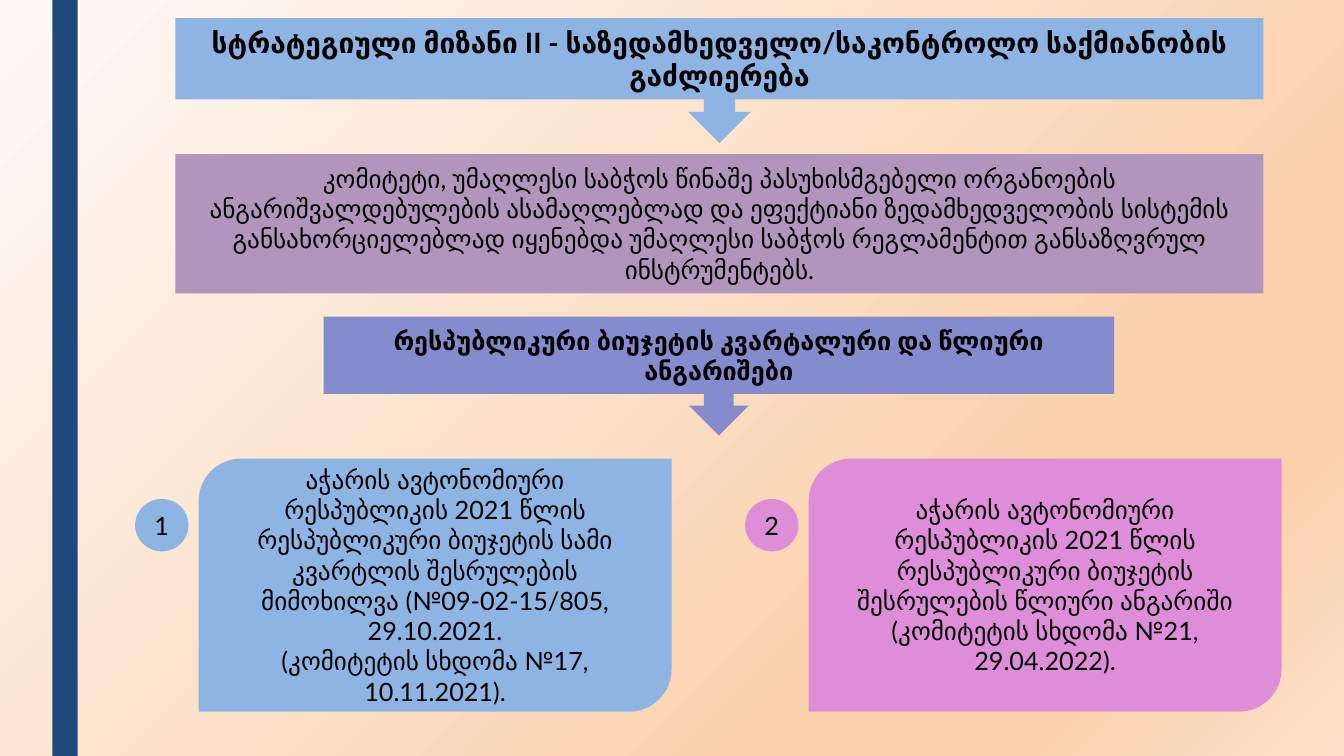
import pptx
import pptx.dml.color
import pptx.enum.shapes
import pptx.enum.text
import pptx.oxml
import pptx.oxml.ns
import pptx.util
from dataclasses import dataclass

Inches = pptx.util.Inches
SHAPE = pptx.enum.shapes.MSO_SHAPE


@dataclass(frozen=True)
class Theme:
    font: str = "Lato"
    title_size: int = 20
    body_size: int = 18
    text: str = "000000"
    navy: str = "1F497D"
    blue: str = "8EB4E3"
    pink: str = "DE8ED8"
    mauve: str = "B295BD"
    indigo: str = "858CCD"
    backdrop: tuple = ((0, "FFFAF6"), (74, "FBD0AC"), (83, "FBD0AC"), (100, "FDE0C7"))


def rgb(value):
    return pptx.dml.color.RGBColor.from_string(value)


def write_text(tf, text, *, font, size, color, bold=False):
    tf.word_wrap = True
    tf.vertical_anchor = pptx.enum.text.MSO_ANCHOR.MIDDLE
    for i, line in enumerate(text.split("\n")):
        p = tf.paragraphs[0] if i == 0 else tf.add_paragraph()
        p.alignment = pptx.enum.text.PP_ALIGN.CENTER
        r = p.add_run()
        r.text = line
        r.font.name = font
        r.font.size = pptx.util.Pt(size)
        r.font.bold = bold
        r.font.color.rgb = rgb(color)


class SlideBuilder:
    def __init__(self, s, theme):
        self.s = s
        self.theme = theme

    def background(self):
        fill = self.s.background.fill
        fill.gradient()
        fill.gradient_angle = 315
        stops = self.s.element.xpath(".//p:bg//a:gsLst")[0]
        for stop in list(stops):
            stops.remove(stop)
        for percent, color in self.theme.backdrop:
            stops.append(pptx.oxml.parse_xml(
                f'<a:gs {pptx.oxml.ns.nsdecls("a")} pos="{percent * 1000}">'
                f'<a:srgbClr val="{color}"/></a:gs>'))

    def box(self, kind, at, fill, text="", size=None, bold=False):
        sp = self.s.shapes.add_shape(kind, *map(Inches, at))
        sp.shadow.inherit = False
        sp.fill.solid()
        sp.fill.fore_color.rgb = rgb(fill)
        sp.line.fill.background()
        if text:
            write_text(sp.text_frame, text, font=self.theme.font, color=self.theme.text,
                       size=size or self.theme.body_size, bold=bold)

    def callout(self, at, fill, text, size=None):
        self.box(SHAPE.DOWN_ARROW_CALLOUT, at, fill, text, size, bold=True)

    def numbered_card(self, number, left, top, fill, text):
        self.box(SHAPE.OVAL, (left - 0.63, top + 0.4, 0.53, 0.52), fill, str(number))
        self.box(SHAPE.ROUND_2_DIAG_RECTANGLE, (left, top, 4.69, 2.51), fill, text)


def main():
    prs = pptx.Presentation()
    prs.slide_width, prs.slide_height = Inches(13.33), Inches(7.5)
    theme = Theme()
    slide = SlideBuilder(prs.slides.add_slide(prs.slide_layouts[6]), theme)

    slide.background()
    slide.box(SHAPE.RECTANGLE, (0.52, 0, 0.25, 7.5), theme.navy)

    reports = (
        (theme.blue, "აჭარის ავტონომიური რესპუბლიკის 2021 წლის რესპუბლიკური ბიუჯეტის სამი "
                     "კვარტლის შესრულების მიმოხილვა (№09-02-15/805, 29.10.2021.\n"
                     "(კომიტეტის სხდომა №17, 10.11.2021)."),
        (theme.pink, "აჭარის ავტონომიური რესპუბლიკის 2021 წლის რესპუბლიკური ბიუჯეტის "
                     "შესრულების წლიური ანგარიში\n"
                     "(კომიტეტის სხდომა №21, 29.04.2022)."),
    )
    for i, (fill, text) in enumerate(reports):
        slide.numbered_card(i + 1, 1.97 + i * 6.05, 4.55, fill, text)

    slide.callout((3.21, 3.14, 7.84, 1.18), theme.indigo,
                  "რესპუბლიკური ბიუჯეტის კვარტალური და წლიური ანგარიშები")
    slide.callout((1.74, 0.18, 10.79, 1.24), theme.blue,
                  "სტრატეგიული მიზანი II - საზედამხედველო/საკონტროლო საქმიანობის გაძლიერება",
                  theme.title_size)
    slide.box(SHAPE.RECTANGLE, (1.74, 1.53, 10.79, 1.38), theme.mauve,
              "კომიტეტი, უმაღლესი საბჭოს წინაშე პასუხისმგებელი ორგანოების "
              "ანგარიშვალდებულების ასამაღლებლად და ეფექტიანი ზედამხედველობის სისტემის "
              "განსახორციელებლად იყენებდა უმაღლესი საბჭოს რეგლამენტით განსაზღვრულ "
              "ინსტრუმენტებს.")

    prs.save("out.pptx")


if __name__ == "__main__":
    main()
